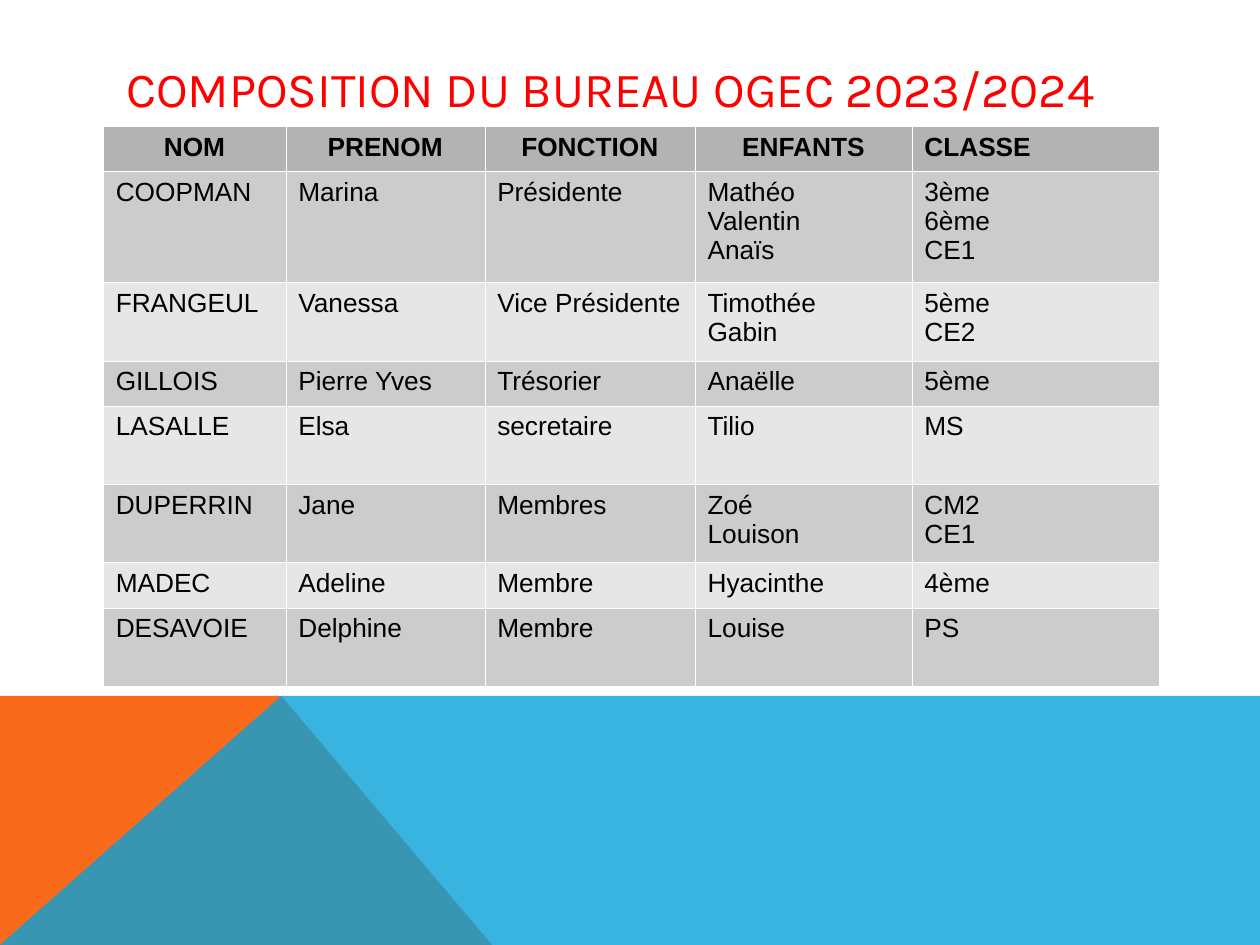
from lxml.etree import SubElement
from pptx import Presentation
from pptx.dml.color import RGBColor
from pptx.enum.text import MSO_ANCHOR, MSO_AUTO_SIZE, PP_ALIGN as Align
from pptx.oxml.ns import qn
from pptx.util import Cm, Pt

COLORS = {
    "title": "FF0000",
    "text": "000000",
    "header": "B3B3B3",
    "dark row": "CCCCCC",
    "light row": "E6E6E6",
    "border": "FFFFFF",
    "orange": "F96A1B",
    "blue": "08A1D9",
}
SLIDE_WIDTH, SLIDE_HEIGHT = 25.4, 19.05
TITLE_BOX = (2.29, 1.02, 20.88, 1.52)
TABLE_BOX = (2.08, 2.54, 21.28, 11.3)
FOOTER_BOX = (0, 14.03, SLIDE_WIDTH, SLIDE_HEIGHT - 14.03)

COLUMN_WIDTHS = (3.68, 4.01, 4.24, 4.37, 4.98)
ROW_HEIGHTS = (0.91, 2.24, 1.58, 0.91, 1.58, 1.58, 0.91, 1.58)
HEADERS = ("NOM", "PRENOM", "FONCTION", "ENFANTS", "CLASSE")
MEMBERS = (
    ("COOPMAN", "Marina", "Présidente", "Mathéo\nValentin\nAnaïs", "3ème\n6ème\nCE1"),
    ("FRANGEUL", "Vanessa", "Vice Présidente", "Timothée\nGabin", "5ème\nCE2"),
    ("GILLOIS", "Pierre Yves", "Trésorier", "Anaëlle", "5ème"),
    ("LASALLE", "Elsa", "secretaire", "Tilio", "MS"),
    ("DUPERRIN", "Jane", "Membres", "Zoé\nLouison", "CM2\nCE1"),
    ("MADEC", "Adeline", "Membre", "Hyacinthe", "4ème"),
    ("DESAVOIE", "Delphine", "Membre", "Louise", "PS"),
)


def rgb(name):
    return RGBColor.from_string(COLORS[name])


def add_run(paragraph, text, font_name, size, color, bold=False):
    run = paragraph.add_run()
    run.text = text
    run.font.name = font_name
    run.font.size = Pt(size)
    run.font.bold = bold
    run.font.color.rgb = rgb(color)


def add_polygon(slide, points, color, opacity=100):
    """Draw a closed outline through points given in centimetres."""
    corners = [(Cm(x), Cm(y)) for x, y in points]
    builder = slide.shapes.build_freeform(*corners[0])
    builder.add_line_segments(corners[1:], close=True)
    shape = builder.convert_to_shape()
    shape.shadow.inherit = False
    shape.line.fill.background()
    shape.fill.solid()
    shape.fill.fore_color.rgb = rgb(color)
    if opacity < 100:
        color_element = shape.fill._xPr.find(qn("a:solidFill"))[0]
        SubElement(color_element, qn("a:alpha"), val=str(opacity * 1000))


def add_footer(slide, box):
    left, top, width, height = box
    right, bottom = left + width, top + height
    peak = (left + 5.67, top)
    add_polygon(slide, [(left, bottom), (left, top), peak, (left + 9.92, bottom)], "orange")
    add_polygon(slide, [(left, bottom), peak, (right, top), (right, bottom)], "blue", 80)


def fill_title(slide, box):
    title = slide.shapes.title
    title.left, title.top, title.width, title.height = map(Cm, box)
    frame = title.text_frame
    frame.auto_size = MSO_AUTO_SIZE.NONE
    frame.word_wrap = True
    frame.vertical_anchor = MSO_ANCHOR.MIDDLE
    paragraph = frame.paragraphs[0]
    paragraph.alignment = Align.LEFT
    add_run(paragraph, "COMPOSITION DU BUREAU OGEC 2023/2024", "Karla", 28, "title")


def add_borders(cell):
    properties = cell._tc.get_or_add_tcPr()
    for side in ("lnL", "lnR", "lnT", "lnB"):
        line = SubElement(properties, qn(f"a:{side}"), w=str(Pt(0.06)))
        fill = SubElement(line, qn("a:solidFill"))
        SubElement(fill, qn("a:srgbClr"), val=COLORS["border"])


def fill_cell(cell, text, fill, alignment, bold):
    add_borders(cell)
    cell.fill.solid()
    cell.fill.fore_color.rgb = rgb(fill)
    frame = cell.text_frame
    for index, line in enumerate(text.split("\n")):
        paragraph = frame.add_paragraph() if index else frame.paragraphs[0]
        paragraph.alignment = alignment
        add_run(paragraph, line, "Arial", 15, "text", bold)


def add_members_table(slide, box):
    rows = (HEADERS, *MEMBERS)
    table = slide.shapes.add_table(len(rows), len(HEADERS), *map(Cm, box)).table
    for column, width in zip(table.columns, COLUMN_WIDTHS):
        column.width = Cm(width)
    for row, height in zip(table.rows, ROW_HEIGHTS):
        row.height = Cm(height)
    for row_index, texts in enumerate(rows):
        is_header = row_index == 0
        fill = "header" if is_header else "dark row" if row_index % 2 else "light row"
        for column_index, text in enumerate(texts):
            alignment = Align.JUSTIFY
            if is_header:
                alignment = Align.LEFT if text == "CLASSE" else Align.CENTER
            fill_cell(table.cell(row_index, column_index), text, fill, alignment, is_header)


def main():
    presentation = Presentation()
    presentation.slide_width = Cm(SLIDE_WIDTH)
    presentation.slide_height = Cm(SLIDE_HEIGHT)
    slide = presentation.slides.add_slide(presentation.slide_layouts[5])
    add_footer(slide, FOOTER_BOX)
    fill_title(slide, TITLE_BOX)
    add_members_table(slide, TABLE_BOX)
    presentation.save("out.pptx")


if __name__ == "__main__":
    main()
